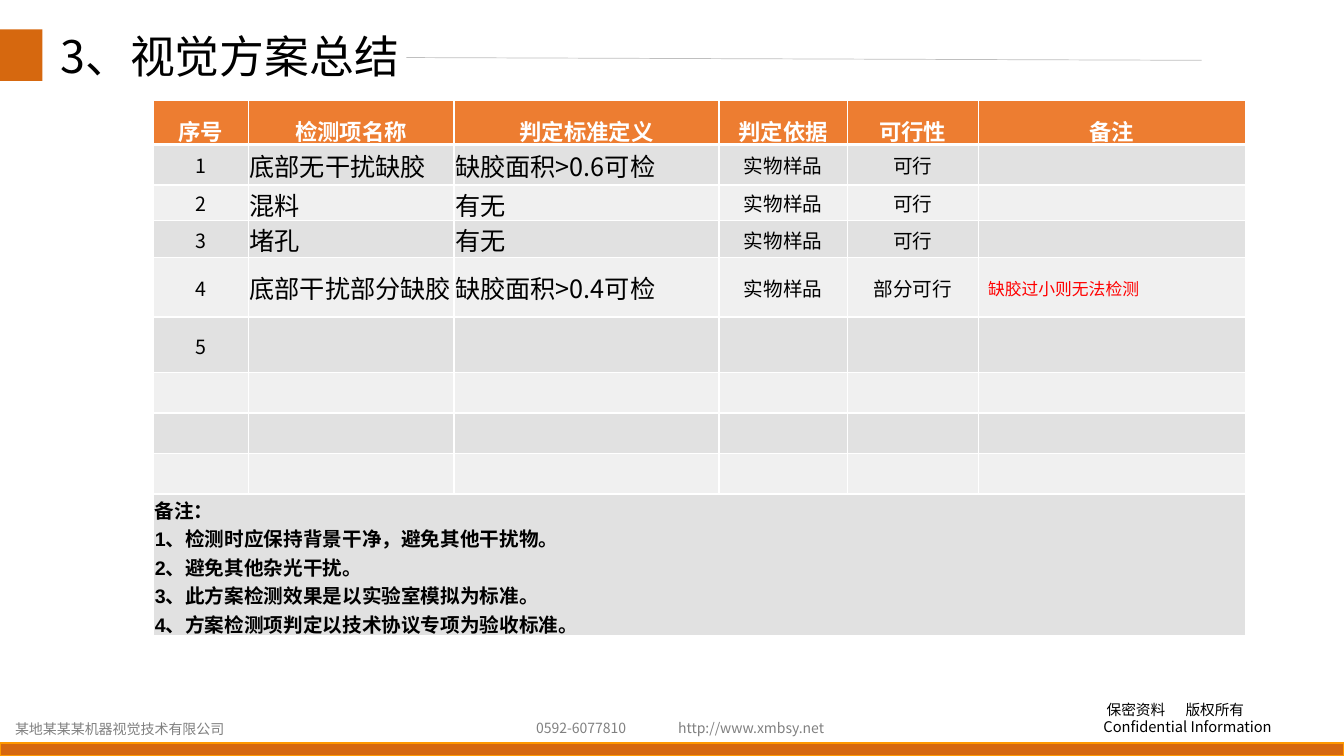
from lxml import etree
from pptx import Presentation
from pptx import util as u
from pptx.dml.color import RGBColor
from pptx.enum import shapes, text
from pptx.oxml.ns import qn

SANS = "Noto Sans CJK SC"
ORANGE, GREY, BLACK, WHITE = "D6680F", "808080", "000000", "FFFFFF"
HEADER_FILL, BAND_FILLS = "ED7D31", ("E1E1E1", "F0F0F0")
CENTER, LEFT = text.PP_ALIGN.CENTER, text.PP_ALIGN.LEFT
MIDDLE = text.MSO_ANCHOR.MIDDLE

TITLE = "3、视觉方案总结"
HEADERS = ["序号", "检测项名称", "判定标准定义", "判定依据", "可行性", "备注"]
ITEMS = [
    ["1", "底部无干扰缺胶", "缺胶面积>0.6可检", "实物样品", "可行", ""],
    ["2", "混料", "有无", "实物样品", "可行", ""],
    ["3", "堵孔", "有无", "实物样品", "可行", ""],
    ["4", "底部干扰部分缺胶", "缺胶面积>0.4可检", "实物样品", "部分可行", "缺胶过小则无法检测"],
    ["5"] + [""] * 5,
] + [[""] * 6] * 3
NOTES = [
    "备注：",
    "1、检测时应保持背景干净，避免其他干扰物。",
    "2、避免其他杂光干扰。",
    "3、此方案检测效果是以实验室模拟为标准。",
    "4、方案检测项判定以技术协议专项为验收标准。",
]
COLUMN_WIDTHS = [2.39, 5.18, 6.68, 3.23, 3.3, 6.73]
ROW_HEIGHTS = [1.12, 1.02, 0.89, 0.94, 1.5, 1.4, 1.02, 1.02, 1.02, 3.56]
COLUMN_FORMATS = [
    dict(size=14, align=CENTER),
    dict(size=18),
    dict(size=18),
    dict(size=14, align=CENTER),
    dict(size=14, align=CENTER),
    dict(size=12, color="FF0000"),
]
# lines, (left, top, width, height), format
FOOTERS = [
    (["某地某某某机器视觉技术有限公司"], (0.13, 18.03, 5.97, 0.69), dict(size=10, color=GREY)),
    (["0592-6077810"], (13.26, 18.01, 3.3, 0.69), dict(size=10, color=GREY)),
    (["http://www.xmbsy.net"], (16.84, 18.01, 4.24, 0.69), dict(size=10, color=GREY)),
    ([" 保密资料\t版权所有", "Confidential Information"], (27.56, 17.53, 5.51, 1.14),
     dict(size=10.5, tab=2.07)),
]


def rgb(value):
    return RGBColor.from_string(value)


def cm(*lengths):
    return [u.Cm(length) for length in lengths]


def write(frame, lines, size=14, color=BLACK, bold=False, font=SANS,
          align=LEFT, spacing=None, tab=None):
    frame.word_wrap = True
    for index, line in enumerate(lines):
        para = frame.paragraphs[0] if index == 0 else frame.add_paragraph()
        para.alignment = align
        para.space_before = u.Pt(0)
        if spacing:
            para.line_spacing = spacing
        if tab:
            stops = etree.SubElement(para._p.get_or_add_pPr(), qn("a:tabLst"))
            etree.SubElement(stops, qn("a:tab"), pos=str(u.Cm(tab)), algn="l")
        span = para.add_run()
        span.text = line
        span.font.size = u.Pt(size)
        span.font.bold = bold
        span.font.color.rgb = rgb(color)
        span.font.name = font
        etree.SubElement(span._r.get_or_add_rPr(), qn("a:ea"), typeface=SANS)


def add_bar(page, place, line=None):
    bar = page.shapes.add_shape(shapes.MSO_SHAPE.RECTANGLE, *cm(*place))
    bar.shadow.inherit = False
    bar.fill.solid()
    bar.fill.fore_color.rgb = rgb(ORANGE)
    if line:
        bar.line.color.rgb = rgb(line)
        bar.line.width = u.Pt(1)
    else:
        bar.line.fill.background()


def style_cell(cell, fill, top=1, bottom=1):
    """Give a cell white borders (widths in points), then its fill."""
    props = cell._tc.get_or_add_tcPr()
    for side, width in (("L", 1), ("R", 1), ("T", top), ("B", bottom)):
        border = etree.SubElement(props, qn("a:ln" + side), w=str(u.Pt(width)))
        solid = etree.SubElement(border, qn("a:solidFill"))
        etree.SubElement(solid, qn("a:srgbClr"), val=WHITE)
    cell.fill.solid()
    cell.fill.fore_color.rgb = rgb(fill)


def set_margins(cell, side, top, bottom):
    cell.margin_left = cell.margin_right = u.Cm(side)
    cell.margin_top, cell.margin_bottom = cm(top, bottom)


def add_summary(page):
    table = page.shapes.add_table(
        len(ROW_HEIGHTS), len(HEADERS),
        *cm(3.87, 2.52, sum(COLUMN_WIDTHS), sum(ROW_HEIGHTS))).table
    for column, width in zip(table.columns, COLUMN_WIDTHS):
        column.width = u.Cm(width)
    for row, height in zip(table.rows, ROW_HEIGHTS):
        row.height = u.Cm(height)

    for cell, header in zip(table.rows[0].cells, HEADERS):
        style_cell(cell, HEADER_FILL, bottom=3)
        set_margins(cell, 0.25, 0.13, 0)
        write(cell.text_frame, [header], size=16, color=WHITE, bold=True,
              align=CENTER, spacing=1.3)

    for r, item in enumerate(ITEMS, start=1):
        for c, value in enumerate(item):
            cell = table.cell(r, c)
            style_cell(cell, BAND_FILLS[(r - 1) % 2], top=3 if r == 1 else 1)
            cell.vertical_anchor = MIDDLE
            set_margins(cell, 0.25 if c == 5 else 0.03, 0.03, 0)
            if value:
                write(cell.text_frame, [value], **COLUMN_FORMATS[c])

    last = len(ROW_HEIGHTS) - 1
    notes = table.cell(last, 0)
    notes.merge(table.cell(last, len(HEADERS) - 1))
    for cell in table.rows[last].cells:
        style_cell(cell, BAND_FILLS[0])
    notes.vertical_anchor = MIDDLE
    set_margins(notes, 0.03, 0.03, 0)
    write(notes.text_frame, NOTES, bold=True, font="Arial")


def main():
    deck = Presentation()
    deck.slide_width, deck.slide_height = cm(33.87, 19.05)
    page = deck.slides.add_slide(deck.slide_layouts[5])

    add_bar(page, (0, 18.72, 33.87, 0.33), line="FF9900")
    for lines, place, style in FOOTERS:
        box = page.shapes.add_textbox(*cm(*place))
        write(box.text_frame, lines, **style)

    rule = page.shapes.add_connector(
        shapes.MSO_CONNECTOR.STRAIGHT, *cm(10.24, 1.45, 30.28, 1.52))
    rule.line.color.rgb = rgb("BFBFBF")
    rule.line.width = u.Pt(0.5)
    etree.SubElement(rule._element.spPr, qn("a:effectLst"))
    add_bar(page, (0, 0.74, 1.07, 1.3))

    title = page.shapes.title
    title.left, title.top, title.width, title.height = cm(1.27, 0.74, 10.11, 1.8)
    title.text_frame.auto_size = text.MSO_AUTO_SIZE.NONE
    title.text_frame.vertical_anchor = text.MSO_ANCHOR.TOP
    write(title.text_frame, [TITLE], size=32, spacing=0.9)

    add_summary(page)
    deck.save("out.pptx")


if __name__ == "__main__":
    main()
